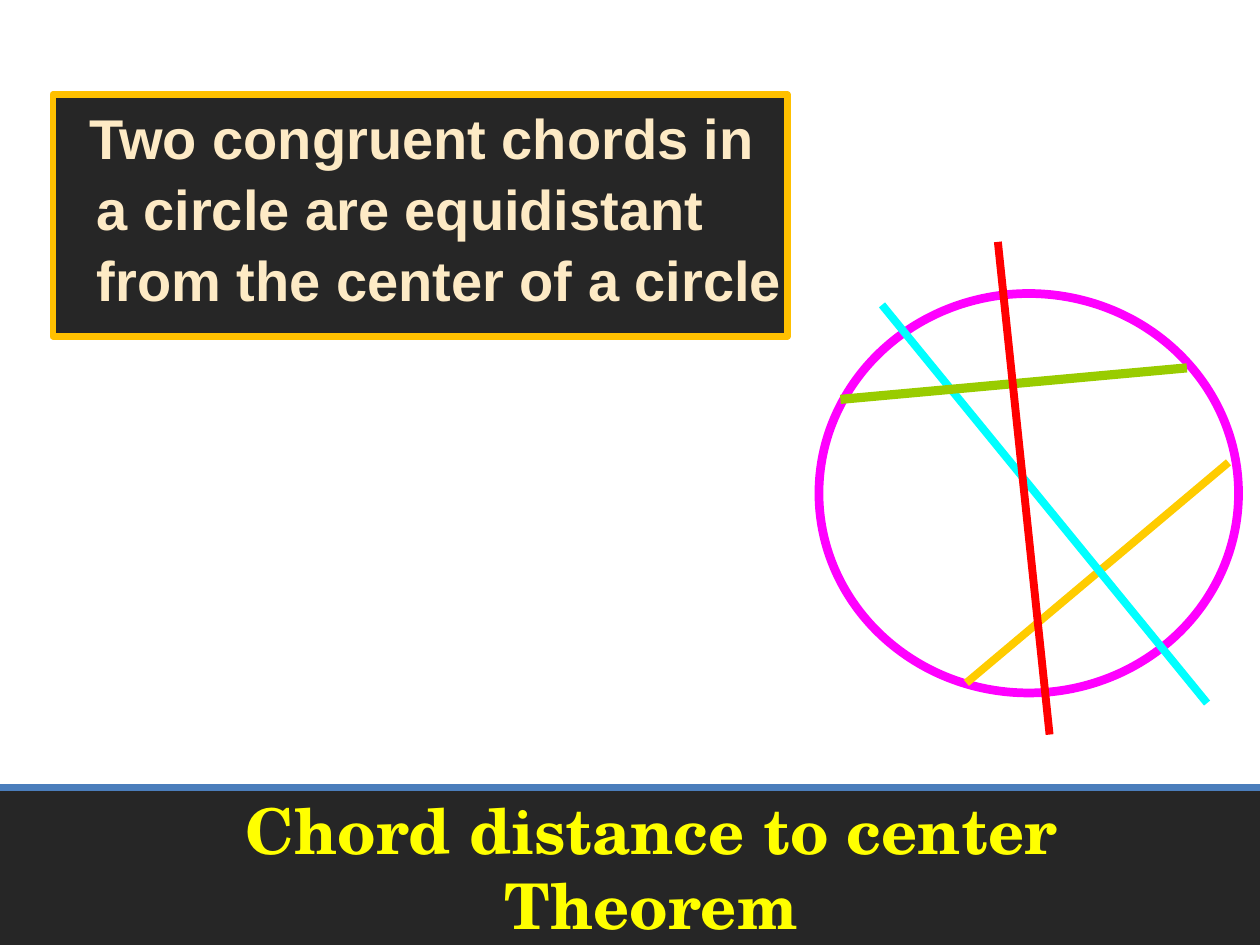
"""Build a slide stating the theorem on chord distance to the center of a circle."""
from lxml import etree
from pptx import Presentation
from pptx import util as u
from pptx.dml.color import RGBColor
from pptx.enum import shapes, text
from pptx.oxml.ns import qn

COLORS = {
    "dark": "262626", "rule": "4B7EBC", "frame": "FFC000",
    "title": "FFFF00", "cream": "FDEAC5", "circle": "FF00FF",
    "gold": "FFCC00", "cyan": "00FFFF", "green": "99CC00", "red": "FF0000",
}
TITLE = "Chord distance to center Theorem"
THEOREM = "Two congruent chords in a circle are equidistant from the center of a circle"
FOOTER = (0, 6.25, 10, 1.25)
FRAME = (0.42, 0.75, 5.83, 1.92)
CIRCLE = (6.5, 2.33, 3.33, 3.17)
RULE = ((0, 6.25), (10, 6.25), "rule", 4)
CHORDS_AND_BISECTORS = [
    ((7.67, 5.42), (9.75, 3.67), "gold", 4.5),
    ((7, 2.42), (9.58, 5.58), "cyan", 4.5),
    ((6.67, 3.17), (9.42, 2.92), "green", 5.25),
    ((7.92, 1.92), (8.33, 5.83), "red", 4.5),
]


def color(name):
    return RGBColor.from_string(COLORS[name])


def add_outline(item, name, width):
    item.line.color.rgb = color(name)
    item.line.width = u.Pt(width)


def add_figure(page, kind, place, fill=None, line=None, width=1):
    figure = page.shapes.add_shape(kind, *map(u.Inches, place))
    figure.shadow.inherit = False
    if fill:
        figure.fill.solid()
        figure.fill.fore_color.rgb = color(fill)
    else:
        figure.fill.background()
    if line:
        add_outline(figure, line, width)
    else:
        figure.line.fill.background()


def add_line(page, start, end, name, width):
    line = page.shapes.add_connector(
        shapes.MSO_CONNECTOR.STRAIGHT, *map(u.Inches, start + end))
    add_outline(line, name, width)
    etree.SubElement(line._element.spPr, qn("a:effectLst"))


def add_text(page, wording, place, *, font, size, ink, align, anchor,
             spacing=1.0, margin=0, indent=0):
    box = page.shapes.add_textbox(*map(u.Inches, place))
    frame = box.text_frame
    frame.word_wrap = True
    frame.vertical_anchor = anchor
    para = frame.paragraphs[0]
    para.alignment = align
    para.line_spacing = spacing
    properties = para._p.get_or_add_pPr()
    properties.set("marL", str(u.Inches(margin)))
    properties.set("indent", str(u.Inches(indent)))
    span = para.add_run()
    span.text = wording
    span.font.name = font
    span.font.size = u.Pt(size)
    span.font.bold = True
    span.font.color.rgb = color(ink)


def main():
    deck = Presentation()
    deck.slide_width, deck.slide_height = u.Inches(10), u.Inches(7.5)
    page = deck.slides.add_slide(deck.slide_layouts[6])
    kinds = shapes.MSO_SHAPE
    add_figure(page, kinds.RECTANGLE, FOOTER, fill="dark")
    add_line(page, *RULE)
    add_figure(page, kinds.RECTANGLE, FRAME, fill="dark", line="frame", width=3.75)
    add_text(page, TITLE, (0.67, 6.42, 9, 0.92), font="TeX Gyre Schola", size=36,
             ink="title", align=text.PP_ALIGN.CENTER, anchor=text.MSO_ANCHOR.MIDDLE)
    add_text(page, THEOREM, (0, 0.75, 6.33, 2), font="Arial", size=32, ink="cream",
             align=text.PP_ALIGN.LEFT, anchor=text.MSO_ANCHOR.TOP,
             spacing=1.05, margin=0.67, indent=-0.06)
    add_figure(page, kinds.OVAL, CIRCLE, line="circle", width=5)
    for segment in CHORDS_AND_BISECTORS:
        add_line(page, *segment)
    deck.save("out.pptx")


if __name__ == "__main__":
    main()
